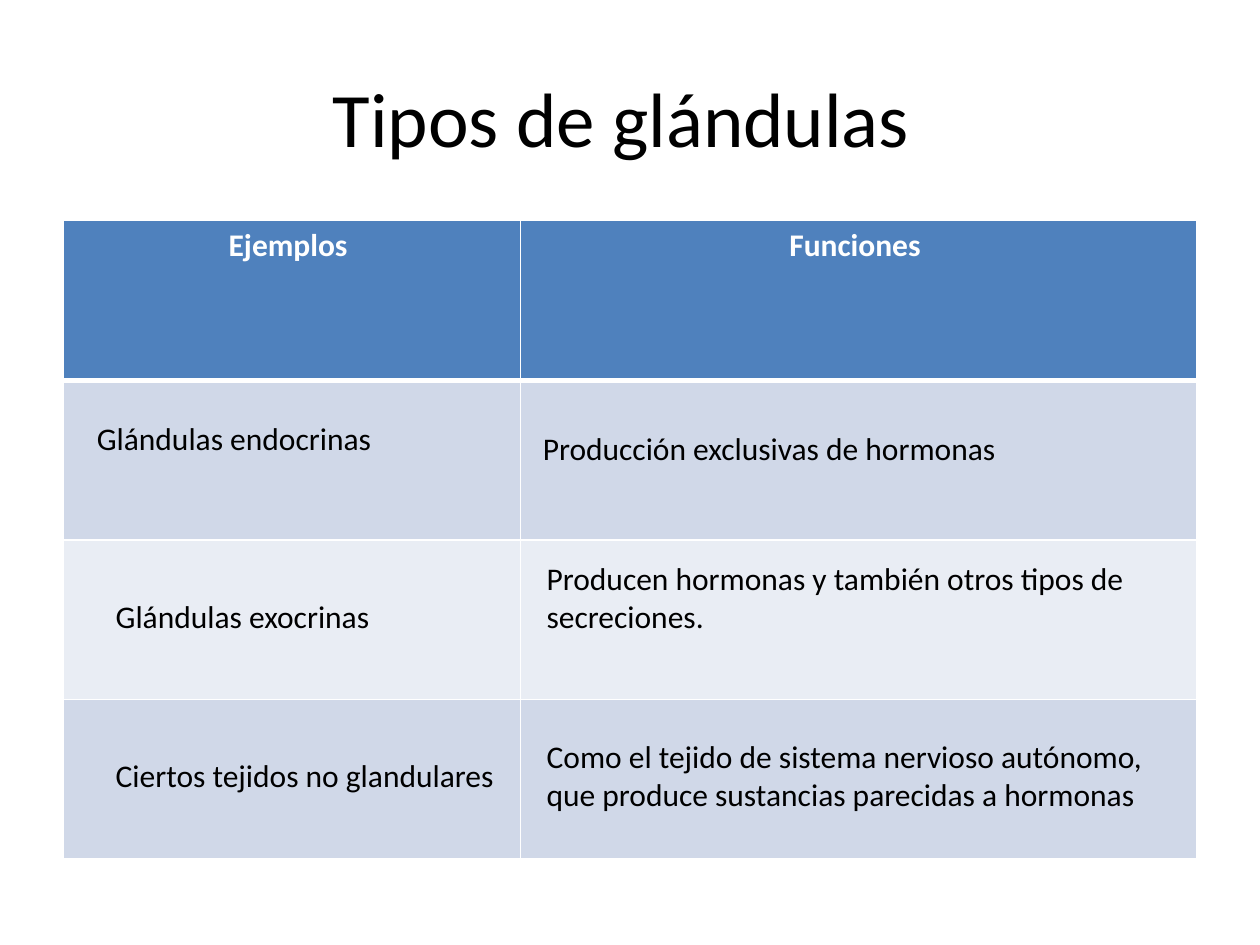
"""Build the slide on gland types: a title, a banded table and its entries."""
import dataclasses

import pptx
import pptx.dml.color
import pptx.enum.text
import pptx.oxml
import pptx.oxml.ns
import pptx.util
from pptx.util import Inches


@dataclasses.dataclass(frozen=True)
class Theme:
    font: str = "Calibri"
    title_size: int = 44
    body_size: int = 18
    text: str = "000000"
    white: str = "FFFFFF"
    header: str = "4F81BD"
    bands: tuple = ("D0D8E8", "E9EDF4")
    thin_line: int = 1
    thick_line: int = 3


theme = Theme()
alignments = pptx.enum.text.PP_ALIGN


def write_text(text_frame, text, size=theme.body_size, color=theme.text,
               bold=False, alignment=alignments.LEFT):
    paragraph = text_frame.paragraphs[0]
    paragraph.alignment = alignment
    run = paragraph.add_run()
    run.text = text
    run.font.name = theme.font
    run.font.size = pptx.util.Pt(size)
    run.font.bold = bold
    run.font.color.rgb = pptx.dml.color.RGBColor.from_string(color)


def format_cell(cell, fill, top, bottom):
    properties = cell._tc.get_or_add_tcPr()
    widths = {"lnL": theme.thin_line, "lnR": theme.thin_line, "lnT": top, "lnB": bottom}
    for side, width in widths.items():
        properties.append(pptx.oxml.parse_xml(
            f'<a:{side} {pptx.oxml.ns.nsdecls("a")} w="{pptx.util.Pt(width)}">'
            f'<a:solidFill><a:srgbClr val="{theme.white}"/></a:solidFill></a:{side}>'))
    cell.fill.solid()
    cell.fill.fore_color.rgb = pptx.dml.color.RGBColor.from_string(fill)


presentation = pptx.Presentation()
presentation.slide_width = Inches(10)
presentation.slide_height = Inches(7.5)
slide = presentation.slides.add_slide(presentation.slide_layouts[5])

title = slide.shapes.title
title.left, title.top = Inches(0.5), Inches(0.3)
title.width, title.height = Inches(9), Inches(1.25)
title.text_frame.vertical_anchor = pptx.enum.text.MSO_ANCHOR.MIDDLE
write_text(title.text_frame, "Tipos de glándulas ", size=theme.title_size,
           alignment=alignments.CENTER)

headings = ["Ejemplos ", "Funciones "]
column_widths = [3.63, 5.37]
row_count = 4
table = slide.shapes.add_table(row_count, len(headings), Inches(0.5), Inches(1.75),
                               Inches(9), Inches(5.07)).table
for column, width in zip(table.columns, column_widths):
    column.width = Inches(width)

for row_index, row in enumerate(table.rows):
    fill = theme.bands[(row_index - 1) % 2] if row_index else theme.header
    top = theme.thick_line if row_index == 1 else theme.thin_line
    bottom = theme.thick_line if row_index == 0 else theme.thin_line
    for cell in row.cells:
        format_cell(cell, fill, top, bottom)

for cell, heading in zip(table.rows[0].cells, headings):
    write_text(cell.text_frame, heading, color=theme.white, bold=True,
               alignment=alignments.CENTER)

entries = [
    ("Glándulas endocrinas", 0.67, 3.28, 2.83, 0.4),
    ("Glándulas exocrinas", 0.82, 4.69, 2.83, 0.4),
    ("Ciertos tejidos no glandulares", 0.82, 5.95, 3.55, 0.4),
    ("Producción exclusivas de hormonas", 4.21, 3.36, 3.94, 0.4),
    ("Producen hormonas y también otros tipos de secreciones.", 4.24, 4.39, 5.02, 0.71),
    ("Como el tejido de sistema nervioso autónomo, que produce sustancias parecidas a hormonas",
     4.24, 5.8, 5.02, 0.71),
]
for text, *box in entries:
    shape = slide.shapes.add_textbox(*map(Inches, box))
    shape.text_frame.word_wrap = True
    shape.text_frame.auto_size = pptx.enum.text.MSO_AUTO_SIZE.SHAPE_TO_FIT_TEXT
    write_text(shape.text_frame, text)

presentation.save("out.pptx")
